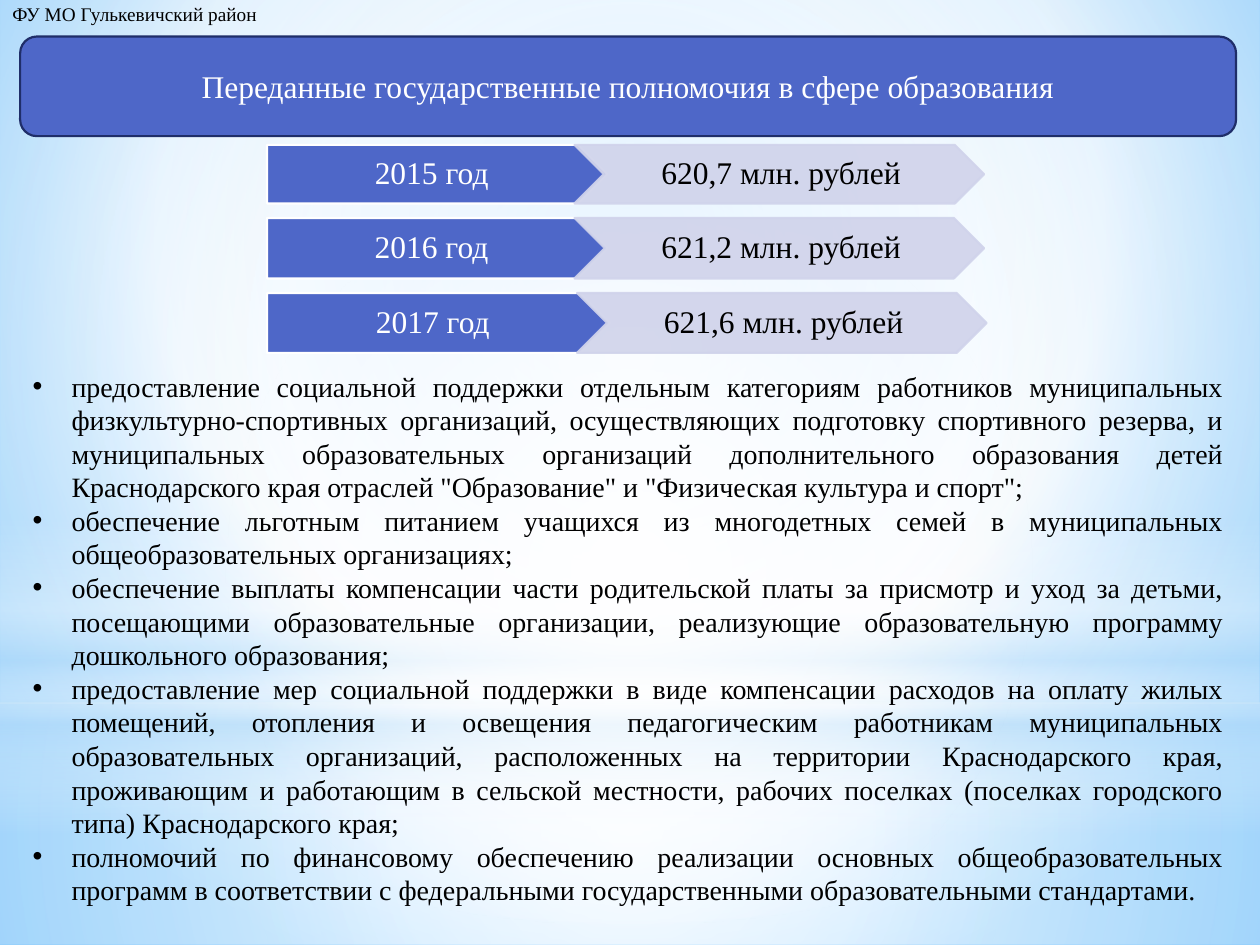
import dataclasses
import lxml.etree
import pptx
import pptx.dml.color
import pptx.enum.shapes
import pptx.enum.text
import pptx.oxml.ns
import pptx.util


@dataclasses.dataclass(frozen=True)
class Theme:
    font: str = "Times New Roman"
    blue: str = "4E67C8"
    navy: str = "1F2E69"
    lilac: str = "D0D3EB"
    sky: str = "B4DCFA"
    white: str = "FFFFFF"
    black: str = "000000"
    edge: float = 1.25
    head: int = 18
    body: int = 16
    small: int = 11


theme = Theme()
rgb = pptx.dml.color.RGBColor.from_string
qn = pptx.oxml.ns.qn
sub = lxml.etree.SubElement
kinds = pptx.enum.shapes.MSO_SHAPE
align = pptx.enum.text.PP_ALIGN
fit = pptx.enum.text.MSO_AUTO_SIZE

deck = pptx.Presentation()
deck.slide_width = pptx.util.Inches(10)
deck.slide_height = pptx.util.Inches(7.5)
slide = deck.slides.add_slide(deck.slide_layouts[6])

# Square grid: 100 columns by 75 rows
cols, rows = 100, 75
unit = deck.slide_width / cols


def blend(host, stops, focus=None):
    """Swap the solid fill in host for a gradient: radial around focus, else top to bottom.

    Each stop is (position, colour, opacity), in percent."""
    grad = lxml.etree.Element(qn("a:gradFill"), rotWithShape="1")
    band = sub(grad, qn("a:gsLst"))
    for pos, tone, alpha in stops:
        stop = sub(band, qn("a:gs"), pos=str(pos * 1000))
        paint = sub(stop, qn("a:srgbClr"), val=tone)
        if alpha < 100:
            sub(paint, qn("a:alpha"), val=str(alpha * 1000))
    if focus:
        route = sub(grad, qn("a:path"), path="circle")
        sides = {side: str(share * 1000) for side, share in zip("ltrb", focus)}
        sub(route, qn("a:fillToRect"), **sides)
    else:
        sub(grad, qn("a:lin"), ang="5400000", scaled="0")
    host.replace(host.find(qn("a:solidFill")), grad)


def add(kind, left, top, width, height, fill, line=None):
    """Add a shape in grid units; without a line colour it has no outline."""
    shape = slide.shapes.add_shape(
        kind, *(round(size * unit) for size in (left, top, width, height)))
    shape.shadow.inherit = False
    shape.fill.solid()
    shape.fill.fore_color.rgb = rgb(fill)
    if line:
        shape.line.color.rgb = rgb(line)
        shape.line.width = pptx.util.Pt(theme.edge)
    else:
        shape.line.fill.background()
    return shape


# Backdrop
slide.background.fill.solid()
blend(slide.element.find(".//" + qn("p:bgPr")),
      [(0, "9ED5FF", 100), (60, theme.white, 100), (100, "5BB9FF", 100)], (20, 10, 20, 60))

mid = (50, 50, 50, 50)
split = 55.8
white, sky = theme.white, theme.sky
glows = [
    (kinds.RECTANGLE, split, rows - split, mid,
     [(0, white, 91), (37, white, 76), (100, sky, 79)]),
    (kinds.RECTANGLE, 0, split, mid,
     [(0, white, 89), (48, white, 62), (100, sky, 79)]),
    (kinds.RECTANGLE, 41.2, 25, None,
     [(0, white, 0), (29, white, 30), (45, sky, 40), (55, white, 26), (65, sky, 60),
      (100, white, 0)]),
    (kinds.OVAL, 17.5, split, mid, [(0, white, 100), (56, white, 0)]),
]
for kind, top, height, focus, stops in glows:
    glow = add(kind, 0, top, cols, height, white)
    blend(glow.element.spPr, stops, focus)

# Sums by year
texts = []
years = [
    ("2015 год", "620,7 млн. рублей", 11.5, 4.65, 0),
    ("2016 год", "621,2 млн. рублей", 17.3, 4.8, 0),
    ("2017 год", "621,6 млн. рублей", 23.25, 4.75, 0.2),
]
for year, total, top, height, shift in years:
    tag = add(kinds.PENTAGON, 21.2, top, 27 + shift, height, theme.blue, white)
    sum_box = add(kinds.CHEVRON, 45.6 + shift, top, 32.5, height, theme.lilac, theme.lilac)
    for paint in sum_box.element.spPr.iter(qn("a:srgbClr")):
        sub(paint, qn("a:alpha"), val="90000")
    for shape, words, tone in ((tag, year, white), (sum_box, total, theme.black)):
        frame = shape.text_frame
        frame.margin_left = pptx.util.Inches(0.03)
        frame.margin_right = 0
        frame.margin_top = frame.margin_bottom = pptx.util.Inches(0.01)
        texts.append((frame, words, theme.head, tone, align.CENTER))

# Title
edge, span = 1.6, 96.5
title = add(kinds.ROUNDED_RECTANGLE, edge, 2.9, span, 7.9, theme.blue, theme.navy)
texts.append((title.text_frame, "Переданные государственные полномочия в сфере образования",
              theme.head, white, align.CENTER))
for frame, *rest in texts:
    frame.vertical_anchor = pptx.enum.text.MSO_ANCHOR.MIDDLE

# List of powers and the owner's name
powers = [
    "предоставление социальной поддержки отдельным категориям работников муниципальных "
    "физкультурно-спортивных организаций, осуществляющих подготовку спортивного резерва, и "
    "муниципальных образовательных организаций дополнительного образования детей "
    "Краснодарского края отраслей \"Образование\" и \"Физическая культура и спорт\";",
    "обеспечение льготным питанием учащихся из многодетных семей в муниципальных "
    "общеобразовательных организациях;",
    "обеспечение выплаты компенсации части родительской платы за присмотр и уход за детьми, "
    "посещающими образовательные организации, реализующие образовательную программу "
    "дошкольного образования;",
    "предоставление мер социальной поддержки в виде компенсации расходов на оплату жилых "
    "помещений, отопления и освещения педагогическим работникам муниципальных "
    "образовательных организаций, расположенных на территории Краснодарского края, "
    "проживающим и работающим в сельской местности, рабочих поселках (поселках городского "
    "типа) Краснодарского края;",
    "полномочий по финансовому обеспечению реализации основных общеобразовательных "
    "программ в соответствии с федеральными государственными образовательными стандартами.",
]
notes = [
    ((edge, 28.8, span, 44.1), True, "\n".join(powers), theme.body, align.JUSTIFY),
    ((0, -0.3, 21.8, 2.9), False, "ФУ МО Гулькевичский район", theme.small, align.LEFT),
]
for place, wrap, words, size, side in notes:
    frame = slide.shapes.add_textbox(*(round(part * unit) for part in place)).text_frame
    frame.word_wrap = wrap
    frame.auto_size = fit.SHAPE_TO_FIT_TEXT
    texts.append((frame, words, size, theme.black, side))

# Wording and type
for frame, words, size, tone, side in texts:
    frame.text = words
    for para in frame.paragraphs:
        para.alignment = side
        if side == align.CENTER and frame is not title.text_frame:
            para.line_spacing = 0.9 if frame.margin_right == 0 else 1
        if side == align.JUSTIFY:
            props = para._p.get_or_add_pPr()
            indent = pptx.util.Inches(0.31)
            props.set("marL", str(indent))
            props.set("indent", str(-indent))
            sub(props, qn("a:buFont"), typeface="Arial")
            sub(props, qn("a:buChar"), char="•")
        for run in para.runs:
            run.font.name = theme.font
            run.font.size = pptx.util.Pt(size)
            run.font.color.rgb = rgb(tone)

deck.save("out.pptx")
